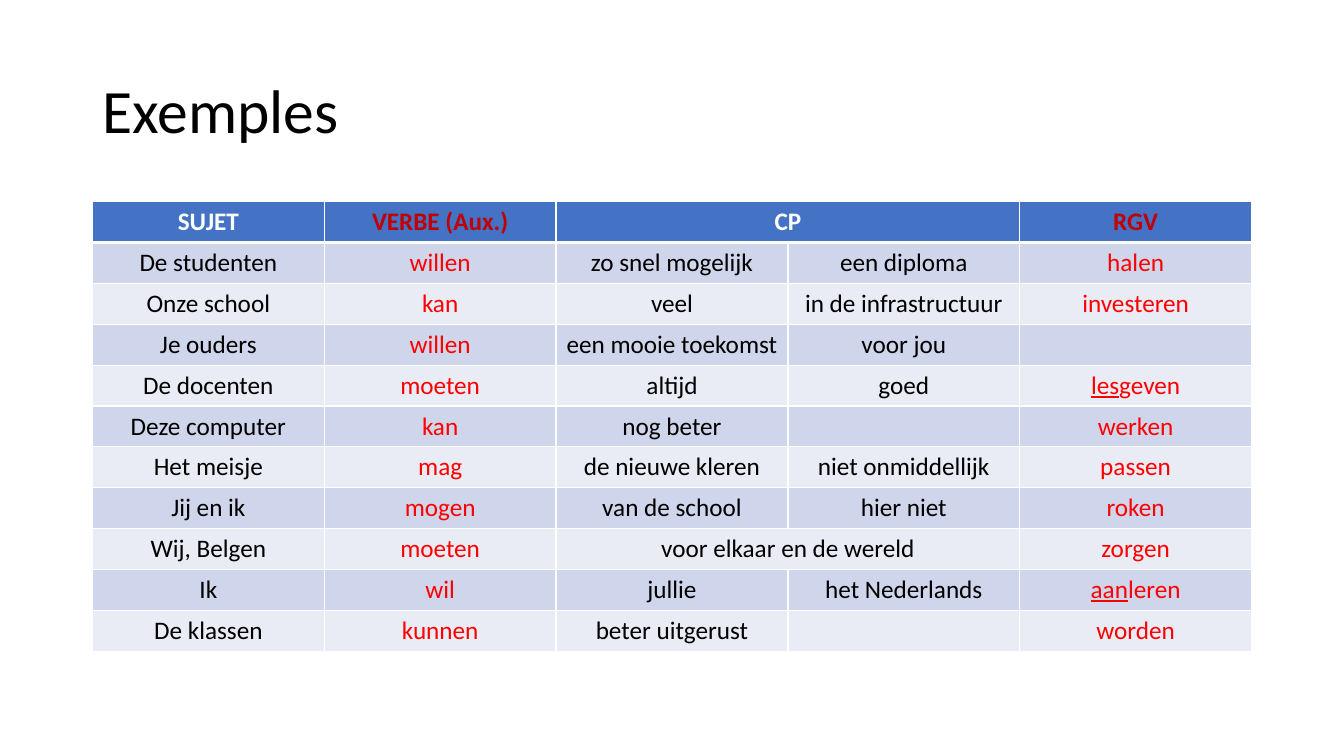
from lxml import etree
from pptx import Presentation
from pptx.dml.color import RGBColor
from pptx.enum.text import MSO_ANCHOR, PP_ALIGN
from pptx.oxml.ns import qn
from pptx.util import Cm, Pt

MIDDLE = MSO_ANCHOR.MIDDLE
CENTER = PP_ALIGN.CENTER

COLORS = {
    "black": "000000",
    "white": "FFFFFF",
    "red": "FF0000",
    "dark_red": "C00000",
    "header": "4472C4",
    "odd_row": "CFD5EA",
    "even_row": "E9EBF5",
}
TITLE_FORMAT = {"name": "Calibri", "size": Pt(44)}
HEADER_FORMAT = {"name": "Calibri", "size": Pt(18), "bold": True}
BODY_FORMAT = {"name": "Calibri", "size": Pt(18), "bold": False}

TITLE_BOX = (2.33, 1.01, 29.21, 3.68)
TABLE_BOX = (2.33, 5.08, 29.21, 11.33)
VERB_COLUMNS = (1, 4)
MERGED_CP_ROWS = (0, 8)
UNDERLINED_PREFIXES = {"lesgeven": "les", "aanleren": "aan"}
SENTENCES = [
    ("SUJET", "VERBE (Aux.)", "CP", "", "RGV"),
    ("De studenten", "willen", "zo snel mogelijk", "een diploma", "halen"),
    ("Onze school", "kan", "veel", "in de infrastructuur", "investeren"),
    ("Je ouders", "willen", "een mooie toekomst", "voor jou", ""),
    ("De docenten", "moeten", "altijd", "goed", "lesgeven"),
    ("Deze computer", "kan", "nog beter", "", "werken"),
    ("Het meisje", "mag", "de nieuwe kleren", "niet onmiddellijk", "passen"),
    ("Jij en ik", "mogen", "van de school", "hier niet", "roken"),
    ("Wij, Belgen", "moeten", "voor elkaar en de wereld", "", "zorgen"),
    ("Ik", "wil", "jullie", "het Nederlands", "aanleren"),
    ("De klassen", "kunnen", "beter uitgerust", "", "worden"),
]


def rgb(color):
    return RGBColor.from_string(COLORS[color])


def add_span(para, text, formats, color):
    span = para.add_run()
    span.text = text
    for attribute, value in formats.items():
        setattr(span.font, attribute, value)
    span.font.color.rgb = rgb(color)
    return span


def add_title(page, box, text):
    frame = page.shapes.add_textbox(*map(Cm, box)).text_frame
    frame.word_wrap = True
    frame.vertical_anchor = MIDDLE
    para = frame.paragraphs[0]
    para.line_spacing = 0.9
    add_span(para, text, TITLE_FORMAT, "black")


def set_borders(cell, widths):
    properties = cell._tc.get_or_add_tcPr()
    for side, width in widths.items():
        line = etree.SubElement(properties, qn(f"a:ln{side}"), w=str(Pt(width)))
        fill = etree.SubElement(line, qn("a:solidFill"))
        etree.SubElement(fill, qn("a:srgbClr"), val=COLORS["white"])


def fill_cell(cell, text, row, column):
    set_borders(cell, {
        "L": 1,
        "R": 1,
        "T": 3 if row == 1 else 1,
        "B": 3 if row == 0 else 1,
    })
    is_verb = column in VERB_COLUMNS
    if row == 0:
        background, formats = "header", HEADER_FORMAT
        color = "dark_red" if is_verb else "white"
    else:
        background = "odd_row" if row % 2 else "even_row"
        formats = BODY_FORMAT
        color = "red" if is_verb else "black"
    cell.fill.solid()
    cell.fill.fore_color.rgb = rgb(background)
    para = cell.text_frame.paragraphs[0]
    para.alignment = CENTER
    prefix = UNDERLINED_PREFIXES.get(text, "")
    if prefix:
        add_span(para, prefix, formats, color).font.underline = True
    if text:
        add_span(para, text[len(prefix):], formats, color)


def add_sentence_table(page, box, sentences):
    row_count, column_count = len(sentences), len(sentences[0])
    left, top, width, height = box
    table = page.shapes.add_table(row_count, column_count, *map(Cm, box)).table
    for column in table.columns:
        column.width = Cm(width / column_count)
    for row in table.rows:
        row.height = Cm(height / row_count)
    for row, sentence in enumerate(sentences):
        for column, text in enumerate(sentence):
            fill_cell(table.cell(row, column), text, row, column)
    for row in MERGED_CP_ROWS:
        table.cell(row, 2).merge(table.cell(row, 3))


def main():
    deck = Presentation()
    deck.slide_width, deck.slide_height = Cm(33.87), Cm(19.05)
    page = deck.slides.add_slide(deck.slide_layouts[6])
    add_title(page, TITLE_BOX, "Exemples")
    add_sentence_table(page, TABLE_BOX, SENTENCES)
    deck.save("out.pptx")


if __name__ == "__main__":
    main()
